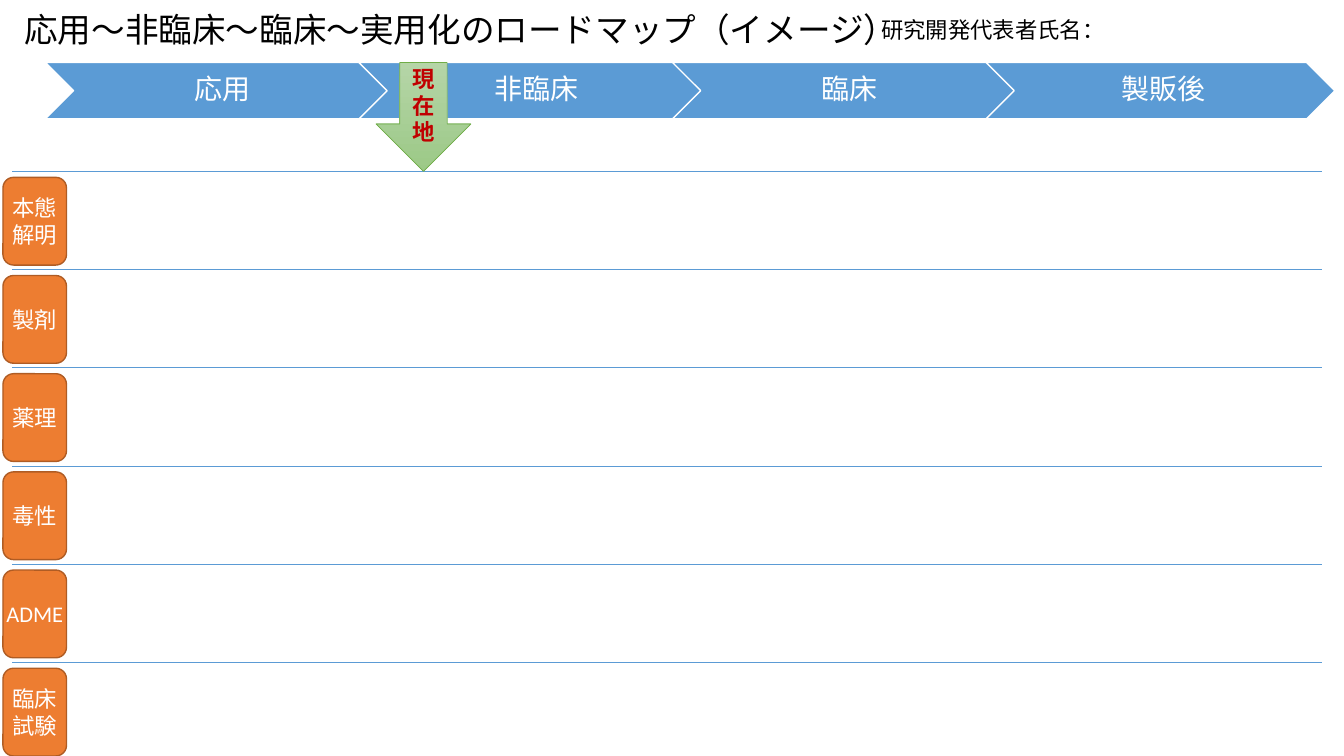
from lxml.etree import SubElement
from pptx import Presentation
from pptx.dml.color import RGBColor
from pptx.enum.shapes import MSO_CONNECTOR as LINE, MSO_SHAPE as SHAPE
from pptx.enum.text import MSO_ANCHOR as ANCHOR, PP_ALIGN as ALIGN
from pptx.oxml.ns import qn
from pptx.util import Inches, Pt

# Content
TITLE = "応用～非臨床～臨床～実用化のロードマップ（イメージ）"
NAME_LABEL = "研究開発代表者氏名："
PHASES = ["応用", "非臨床", "臨床", "製販後"]
TOPICS = ["本態\n解明", "製剤", "薬理", "毒性", "ADME", "臨床\n試験"]
MARKER = "現在地"

# Layout in inches
PHASE_LEFT, PHASE_TOP, PHASE_STEP, PHASE_SIZE = 0.45, 0.62, 3.11, (3.46, 0.56)
ROW_TOP, ROW_STEP = 1.7, 0.974
LINE_LEFT, LINE_RIGHT = 0.12, 13.11
TOPIC_LEFT, TOPIC_GAP, TOPIC_SIZE = 0.03, 0.06, (0.63, 0.87)

# Colours
BLUE, ORANGE, BROWN, GREEN = "5B9BD5", "ED7D31", "AF5C24", "70AD47"
WHITE, BLACK, RED = "FFFFFF", "000000", "C00000"
MARKER_SHADES = ["B5D5A7", "9CC987"]

deck = Presentation()
deck.slide_width, deck.slide_height = Inches(13.33), Inches(7.5)
page = deck.slides.add_slide(deck.slide_layouts[6])


def paint(color, value):
    color.rgb = RGBColor.from_string(value)


def write(box, text, size, color, margins=(0.1, 0.05, 0.1, 0.05), align=ALIGN.CENTER,
          spacing=None, bold=False, wrap=True):
    frame = box.text_frame
    frame.text = text
    frame.word_wrap = wrap
    frame.vertical_anchor = ANCHOR.MIDDLE
    (frame.margin_left, frame.margin_top,
     frame.margin_right, frame.margin_bottom) = map(Inches, margins)
    for para in frame.paragraphs:
        para.alignment = align
        para.line_spacing = spacing
        for span in para.runs:
            span.font.name, span.font.size, span.font.bold = "Calibri", Pt(size), bold
            paint(span.font.color, color)


def add_box(kind, left, top, width, height, outline, line_width, fill=None):
    box = page.shapes.add_shape(kind, *map(Inches, (left, top, width, height)))
    box.shadow.inherit = False
    if fill:
        box.fill.solid()
        paint(box.fill.fore_color, fill)
    paint(box.line.color, outline)
    box.line.width = Pt(line_width)
    return box


def add_text(left, top, width, height, text, size, **style):
    box = page.shapes.add_textbox(*map(Inches, (left, top, width, height)))
    write(box, text, size, BLACK, spacing=0.9, **style)


# Phase chevrons
for index, phase in enumerate(PHASES):
    chevron = add_box(SHAPE.CHEVRON, PHASE_LEFT + index * PHASE_STEP, PHASE_TOP,
                      *PHASE_SIZE, WHITE, 1, BLUE)
    write(chevron, phase, 20, WHITE, (0.09, 0.03, 0.03, 0.03), spacing=0.9)

# Topic rows, each with a line above its label
for index, topic in enumerate(TOPICS):
    top = ROW_TOP + index * ROW_STEP
    rule = page.shapes.add_connector(LINE.STRAIGHT, Inches(LINE_LEFT), Inches(top),
                                     Inches(LINE_RIGHT), Inches(top))
    paint(rule.line.color, BLUE)
    rule.line.width = Pt(0.5)
    SubElement(rule.element.spPr, qn("a:effectLst"))
    label = add_box(SHAPE.ROUNDED_RECTANGLE, TOPIC_LEFT, top + TOPIC_GAP,
                    *TOPIC_SIZE, BROWN, 1, ORANGE)
    write(label, topic, 16, WHITE, (0, 0, 0, 0), wrap=False)

# Current position marker
marker = add_box(SHAPE.DOWN_ARROW, 3.73, 0.62, 0.94, 1.08, GREEN, 0.5)
marker.fill.gradient()
marker.fill.gradient_angle = 270
for stop, shade in zip(marker.fill.gradient_stops, MARKER_SHADES):
    paint(stop.color, shade)
write(marker, MARKER, 16, RED, bold=True)

# Title and name label
add_text(-0.46, 0, 10.06, 0.62, TITLE, 24)
add_text(8.56, 0.11, 3.92, 0.41, NAME_LABEL, 16,
         margins=(0.18, 0.05, 0.1, 0.05), align=ALIGN.LEFT)

deck.save("out.pptx")
